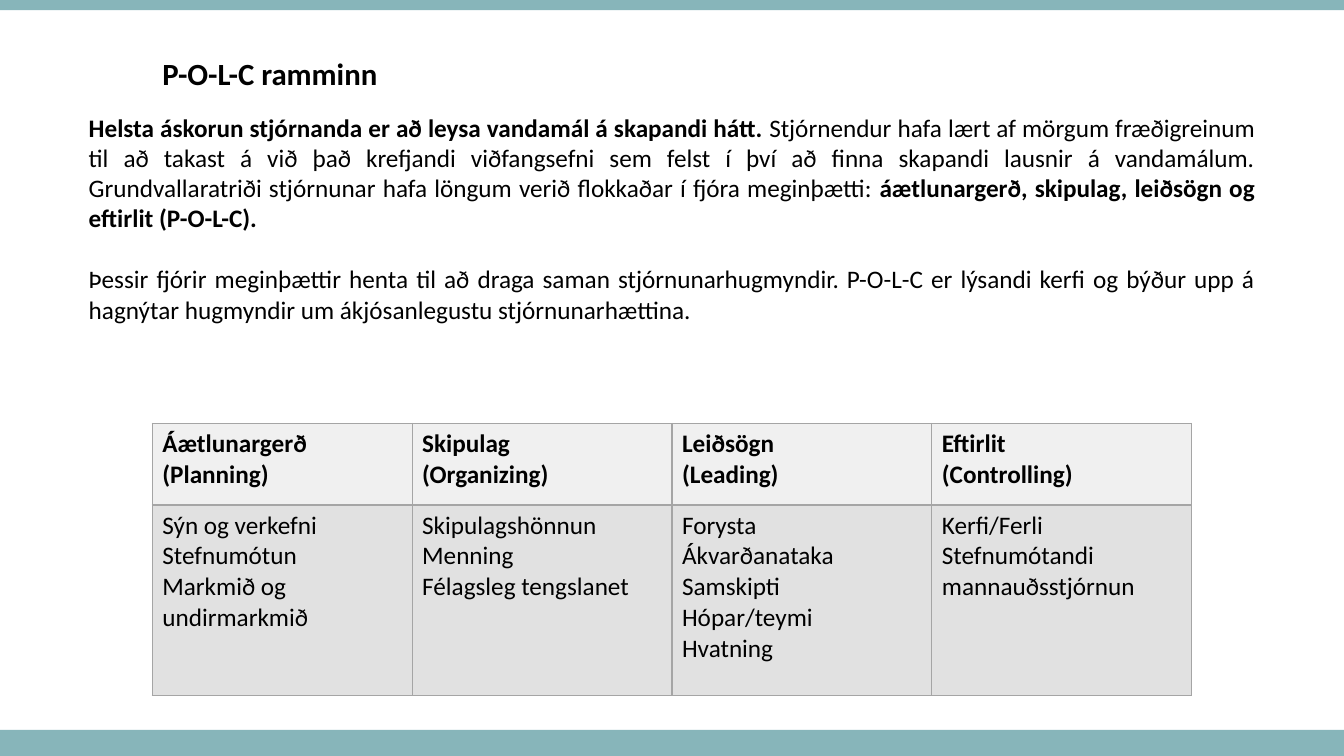
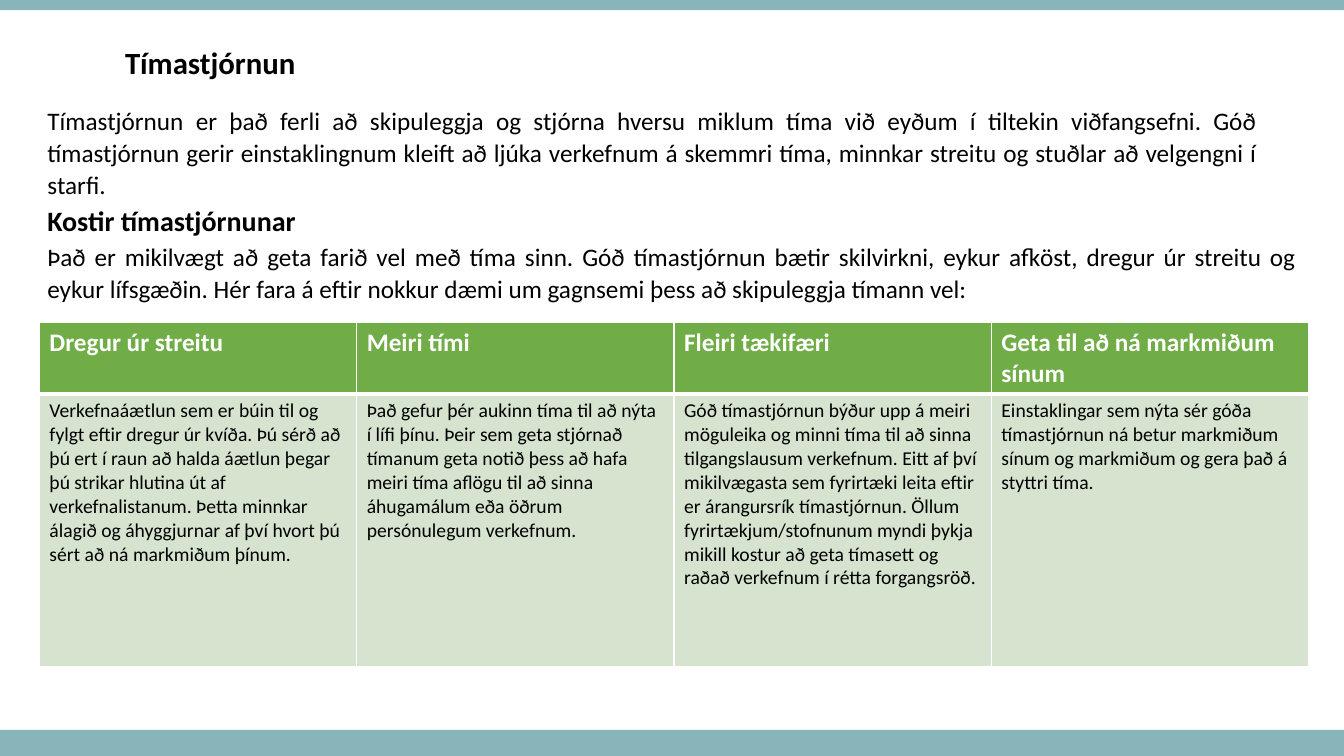
from lxml import etree
from pptx import Presentation
from pptx.dml.color import RGBColor
from pptx.enum.shapes import MSO_SHAPE
from pptx.enum.text import MSO_ANCHOR, MSO_AUTO_SIZE, PP_ALIGN
from pptx.oxml.ns import qn
from pptx.util import Inches, Pt

RECTANGLE = MSO_SHAPE.RECTANGLE
TOP = MSO_ANCHOR.TOP
NO_AUTOFIT = MSO_AUTO_SIZE.NONE
LEFT, JUSTIFY = PP_ALIGN.LEFT, PP_ALIGN.JUSTIFY
TITLE_AND_CONTENT = 1

FONT = "Calibri"
BLACK, WHITE, TEAL = "000000", "FFFFFF", "87B5BA"
GREY_LINE, GREY_HEAD, GREY_BODY = "A5A5A5", "F0F0F0", "E1E1E1"
GREEN_HEAD, GREEN_BODY = "70AD47", "D5E3CF"


def color(hex_string):
    return RGBColor.from_string(hex_string)


class Deck:
    """Holds the style and the current slide; lengths are percent of the slide."""

    def __init__(self):
        self.presentation = Presentation()
        self.presentation.slide_width = Inches(13.33)
        self.presentation.slide_height = Inches(7.5)
        self.slide = None

    def across(self, share):
        return round(self.presentation.slide_width * share / 100)

    def down(self, share):
        return round(self.presentation.slide_height * share / 100)

    def box(self, left, top, width, height):
        return self.across(left), self.down(top), self.across(width), self.down(height)

    def new_slide(self, title, left, top, width):
        layout = self.presentation.slide_layouts[TITLE_AND_CONTENT]
        self.slide = self.presentation.slides.add_slide(layout)
        self.band(96.53, 3.47)
        self.band(0, 1.33)
        self.fill_text(self.slide.shapes.title, (left, top, width, 6.27),
                       [[(title, True)]], size=22)

    def band(self, top, height):
        band = self.slide.shapes.add_shape(RECTANGLE, *self.box(0, top, 100, height))
        band.shadow.inherit = False
        band.fill.solid()
        band.fill.fore_color.rgb = color(TEAL)
        band.line.fill.background()

    def body(self, place, paragraphs, **style):
        self.fill_text(self.slide.placeholders[1], place, paragraphs, **style)

    def text(self, place, paragraphs, **style):
        shape = self.slide.shapes.add_textbox(*self.box(*place))
        self.fill_text(shape, place, paragraphs, **style)

    def fill_text(self, shape, place, paragraphs, size=18, align=LEFT, spacing=1.0, after=0):
        """Place the shape and write paragraphs, each a list of (text, bold) runs."""
        shape.left, shape.top, shape.width, shape.height = self.box(*place)
        frame = shape.text_frame
        frame.word_wrap = True
        frame.auto_size = NO_AUTOFIT
        frame.vertical_anchor = TOP
        for index, runs in enumerate(paragraphs):
            paragraph = frame.add_paragraph() if index else frame.paragraphs[0]
            for text, bold in runs:
                run = paragraph.add_run()
                run.text = text
                run.font.bold = bold
            paragraph.alignment = align
            paragraph.line_spacing = spacing
            paragraph.space_before = Pt(0)
            paragraph.space_after = Pt(after)
            self.format_font(paragraph, size, BLACK)
            self.remove_bullet(paragraph)

    def format_font(self, paragraph, size, font_color):
        font = paragraph.font
        font.name, font.size = FONT, Pt(size)
        font.color.rgb = color(font_color)

    def remove_bullet(self, paragraph):
        properties = paragraph._p.get_or_add_pPr()
        properties.set("marL", "0")
        properties.set("indent", "0")
        bullet = etree.Element(qn("a:buNone"))
        properties.find(qn("a:spcAft")).addnext(bullet)

    def table(self, left, top, width, rows, row_styles, line_color):
        """row_styles: (height, fill, text colour, size, bold, bottom line) per row."""
        height = sum(style[0] for style in row_styles)
        frame = self.slide.shapes.add_table(
            len(rows), len(rows[0]), *self.box(left, top, width, height))
        table = frame.table
        table.horz_banding = False
        for row, texts, style in zip(table.rows, rows, row_styles):
            row_height, fill, font_color, size, bold, bottom_line = style
            row.height = self.down(row_height)
            for cell, text in zip(row.cells, texts):
                cell.text = text
                for paragraph in cell.text_frame.paragraphs:
                    self.format_font(paragraph, size, font_color)
                    paragraph.font.bold = bold
                self.cell_borders(cell, line_color, bottom_line)
                cell.fill.solid()
                cell.fill.fore_color.rgb = color(fill)

    def cell_borders(self, cell, line_color, bottom_line):
        properties = cell._tc.get_or_add_tcPr()
        for side, points in (("L", 1), ("R", 1), ("T", 1), ("B", bottom_line)):
            line = etree.SubElement(properties, qn(f"a:ln{side}"), w=str(Pt(points)))
            fill = etree.SubElement(line, qn("a:solidFill"))
            etree.SubElement(fill, qn("a:srgbClr"), val=line_color)


def add_framework_slide(deck):
    deck.new_slide("P-O-L-C ramminn", 11.33, 6.53, 48.6)
    deck.body((5.85, 14.13, 88.3, 29.6), [
        [("Helsta áskorun stjórnanda er að leysa vandamál á skapandi hátt. ", True),
         ("Stjórnendur hafa lært af mörgum fræðigreinum til að takast á við það "
          "krefjandi viðfangsefni sem felst í því að finna skapandi lausnir á "
          "vandamálum. Grundvallaratriði stjórnunar hafa löngum verið flokkaðar í "
          "fjóra meginþætti: ", False),
         ("áætlunargerð, skipulag, leiðsögn og eftirlit (P-O-L-C).", True)],
        [("Þessir fjórir meginþættir henta til að draga saman stjórnunarhugmyndir. "
          "P-O-L-C er lýsandi kerfi og býður upp á hagnýtar hugmyndir um "
          "ákjósanlegustu stjórnunarhættina.", False)],
    ], align=JUSTIFY, after=22)
    deck.table(11.33, 56, 77.34, [
        ["Áætlunargerð (Planning)", "Skipulag\n(Organizing)",
         "Leiðsögn\n(Leading)", "Eftirlit\n(Controlling)"],
        ["Sýn og verkefni\nStefnumótun\nMarkmið og undirmarkmið",
         "Skipulagshönnun\nMenning\nFélagsleg tengslanet",
         "Forysta\nÁkvarðanataka\nSamskipti\nHópar/teymi\nHvatning",
         "Kerfi/Ferli\nStefnumótandi mannauðsstjórnun"],
    ], [(10.8, GREY_HEAD, BLACK, 18, True, 1),
        (25.2, GREY_BODY, BLACK, 18, False, 1)], GREY_LINE)


def add_time_slide(deck):
    deck.new_slide("Tímastjórnun", 8.55, 5.07, 42.83)
    deck.body((2.78, 12.93, 91.52, 14.13), [[(
        "Tímastjórnun er það ferli að skipuleggja og stjórna hversu miklum tíma við "
        "eyðum í tiltekin viðfangsefni. Góð tímastjórnun gerir einstaklingnum kleift "
        "að ljúka verkefnum á skemmri tíma, minnkar streitu og stuðlar að velgengni "
        "í starfi.", False)]], align=JUSTIFY, spacing=1.07, after=8)
    deck.text((2.78, 26, 91.52, 6), [[("Kostir tímastjórnunar", True)]],
              size=20, spacing=1.07, after=8)
    deck.text((2.78, 30.93, 94.45, 9.73), [[(
        "Það er mikilvægt að geta farið vel með tíma sinn. Góð tímastjórnun bætir "
        "skilvirkni, eykur afköst, dregur úr streitu og eykur lífsgæðin. Hér fara á "
        "eftir nokkur dæmi um gagnsemi þess að skipuleggja tímann vel:", False)]],
        align=JUSTIFY, spacing=1.07, after=8)
    deck.table(2.93, 42.67, 94.45, [
        ["Dregur úr streitu", "Meiri tími", "Fleiri tækifæri",
         "Geta til að ná markmiðum sínum"],
        ["Verkefnaáætlun sem er búin til og fylgt eftir dregur úr kvíða. Þú sérð að "
         "þú ert í raun að halda áætlun þegar þú strikar hlutina út af "
         "verkefnalistanum. Þetta minnkar álagið og áhyggjurnar af því hvort þú sért "
         "að ná markmiðum þínum.",
         "Það gefur þér aukinn tíma til að nýta í lífi þínu. Þeir sem geta stjórnað "
         "tímanum geta notið þess að hafa meiri tíma aflögu til að sinna áhugamálum "
         "eða öðrum persónulegum verkefnum.",
         "Góð tímastjórnun býður upp á meiri möguleika og minni tíma til að sinna "
         "tilgangslausum verkefnum. Eitt af því mikilvægasta sem fyrirtæki leita "
         "eftir er árangursrík tímastjórnun. Öllum fyrirtækjum/stofnunum myndi þykja "
         "mikill kostur að geta tímasett og raðað verkefnum í rétta forgangsröð.",
         "Einstaklingar sem nýta sér góða tímastjórnun ná betur markmiðum sínum og "
         "markmiðum og gera það á styttri tíma."],
    ], [(9.2, GREEN_HEAD, WHITE, 18, True, 3),
        (36, GREEN_BODY, BLACK, 14, False, 1)], WHITE)


def main():
    deck = Deck()
    add_framework_slide(deck)
    add_time_slide(deck)
    deck.presentation.save("out.pptx")


if __name__ == "__main__":
    main()
